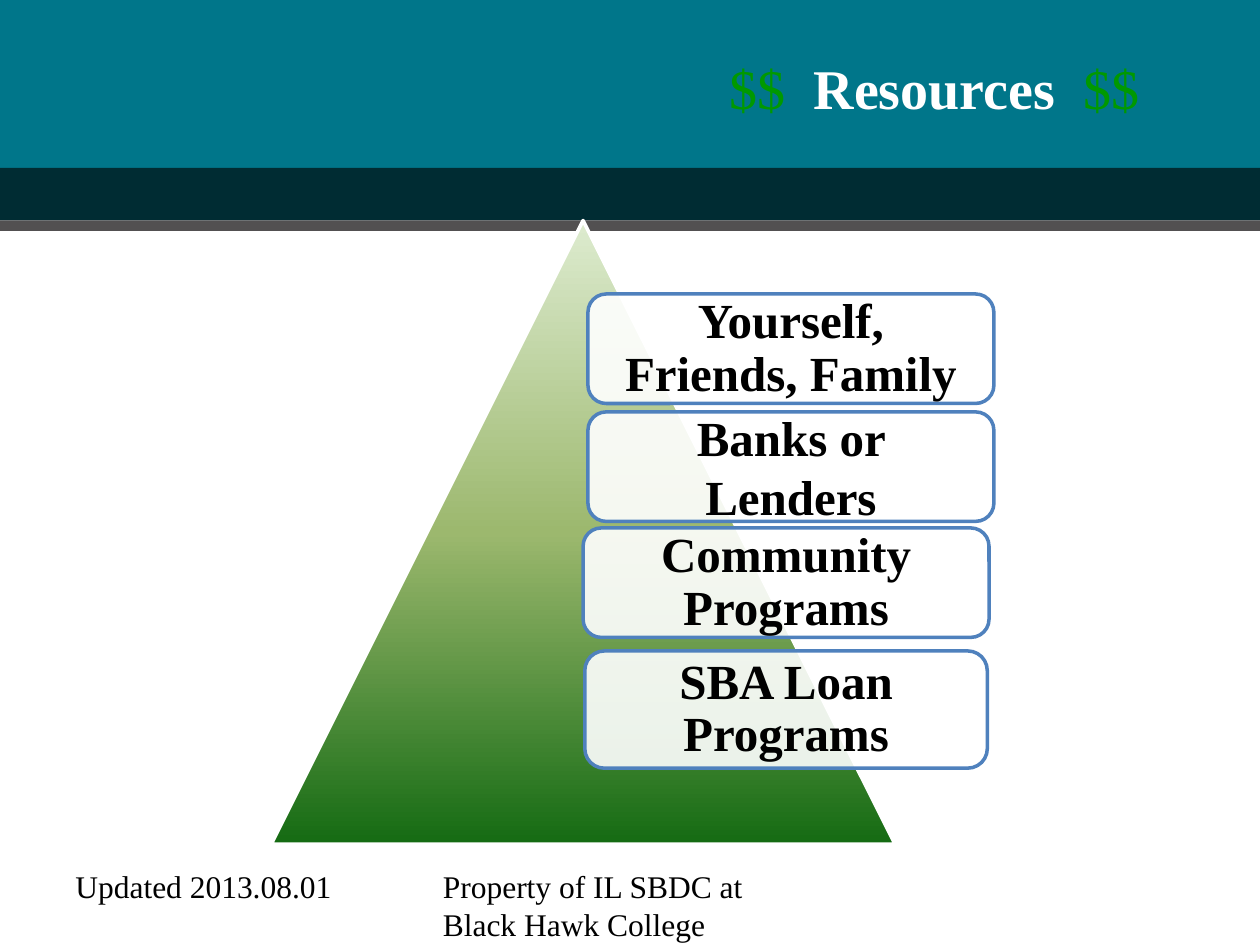
from copy import deepcopy

from pptx import Presentation
from pptx.dml.color import RGBColor
from pptx.enum.shapes import MSO_SHAPE
from pptx.enum.text import MSO_ANCHOR, PP_ALIGN
from pptx.oxml.ns import qn
from pptx.util import Pt

TEAL = RGBColor(0x00, 0x76, 0x8A)
DARK_TEAL = RGBColor(0x00, 0x2C, 0x33)
GREY = RGBColor(0x52, 0x50, 0x51)
MONEY_GREEN = RGBColor(0x00, 0x99, 0x00)
BLUE = RGBColor(0x4F, 0x81, 0xBD)
WHITE = RGBColor(0xFF, 0xFF, 0xFF)
BLACK = RGBColor(0x00, 0x00, 0x00)
PYRAMID_COLORS = (RGBColor(0xDD, 0xEB, 0xCF), RGBColor(0x9C, 0xB8, 0x6E),
                  RGBColor(0x15, 0x6B, 0x13))
FONT = "Times New Roman"
PAGE_WIDTH, PAGE_HEIGHT = 720, 540


def add_span(para, text, color, **formats):
    span = para.add_run()
    span.text = text
    for name, value in {"name": FONT, **formats}.items():
        setattr(span.font, name, value)
    span.font.color.rgb = color


def add_shape(page, kind, box, line=None):
    shape = page.shapes.add_shape(kind, *map(Pt, box))
    shape.shadow.inherit = False
    if line is None:
        shape.line.fill.background()
    else:
        shape.line.color.rgb = line
        shape.line.width = Pt(2)
    return shape


def add_text_box(page, box, anchor=MSO_ANCHOR.TOP):
    frame = page.shapes.add_textbox(*map(Pt, box)).text_frame
    frame.word_wrap = True
    frame.vertical_anchor = anchor
    return frame.paragraphs[0]


def add_header(page, box):
    """Stack the three header bands and set the title on the top one."""
    left, top, width, _ = box
    for height, color in ((96, TEAL), (30, DARK_TEAL), (6, GREY)):
        band = add_shape(page, MSO_SHAPE.RECTANGLE, (left, top, width, height))
        band.fill.solid()
        band.fill.fore_color.rgb = color
        top += height
    para = add_text_box(page, (left + 396, box[1] + 21.6, 276, 56), MSO_ANCHOR.MIDDLE)
    para.alignment = PP_ALIGN.CENTER
    add_span(para, "$$  ", MONEY_GREEN, size=Pt(32))
    add_span(para, "Resources  ", WHITE, size=Pt(32), bold=True)
    add_span(para, "$$", MONEY_GREEN, size=Pt(32))


def add_pyramid(page, box):
    pyramid = add_shape(page, MSO_SHAPE.ISOSCELES_TRIANGLE, box, WHITE)
    pyramid.fill.gradient()
    pyramid.fill.gradient_angle = 270
    first = next(pyramid.element.spPr.iter(qn("a:gs")))
    first.addnext(deepcopy(first))
    for index, (stop, color) in enumerate(zip(pyramid.fill.gradient_stops, PYRAMID_COLORS)):
        stop.color.rgb = color
        stop.position = index / 2


def add_label(page, box, text, line_spacing):
    label = add_shape(page, MSO_SHAPE.ROUNDED_RECTANGLE, box, BLUE)
    label.fill.solid()
    label.fill.fore_color.rgb = WHITE
    color = next(label.element.spPr.iter(qn("a:srgbClr")))
    color.makeelement(qn("a:alpha"), {})
    alpha = color.makeelement(qn("a:alpha"), {"val": "90000"})
    color.append(alpha)
    frame = label.text_frame
    frame.word_wrap = True
    frame.vertical_anchor = MSO_ANCHOR.MIDDLE
    for side in ("left", "top", "right", "bottom"):
        setattr(frame, f"margin_{side}", Pt(8.4))
    para = frame.paragraphs[0]
    para.alignment = PP_ALIGN.CENTER
    para.line_spacing = line_spacing
    add_span(para, text, BLACK, size=Pt(28), bold=True)


def add_funding_sources(page, box):
    """Draw the pyramid with the labels hung from its centre line."""
    left, top, width, _ = box
    add_pyramid(page, box)
    center = left + width / 2
    labels = (
        ("Yourself, Friends, Family", 2.8, 42, 232, 62.6, 0.9),
        ("Banks or Lenders", 2.8, 109.4, 232, 62.6, 1.0),
        ("Community Programs", 0, 175.7, 232, 62.6, 0.9),
        ("SBA Loan Programs", 1, 246, 230, 67, 0.9),
    )
    for text, shift, drop, label_width, height, spacing in labels:
        add_label(page, (center + shift, top + drop, label_width, height), text, spacing)


def add_footer(page, box):
    left, top, _, height = box
    for text, offset, width in (("Property of IL SBDC at Black Hawk College", 210, 228),
                                ("Updated 2013.08.01", 0, 168)):
        para = add_text_box(page, (left + offset, top, width, height))
        add_span(para, text, BLACK, size=Pt(18))


def main():
    deck = Presentation()
    deck.slide_width, deck.slide_height = Pt(PAGE_WIDTH), Pt(PAGE_HEIGHT)
    page = deck.slides.add_slide(deck.slide_layouts[6])
    add_header(page, (0, 0, PAGE_WIDTH, 132))
    add_funding_sources(page, (155, 126, 356.4, 356.4))
    add_footer(page, (36, 492, 438, 37.5))
    deck.save("out.pptx")


if __name__ == "__main__":
    main()
